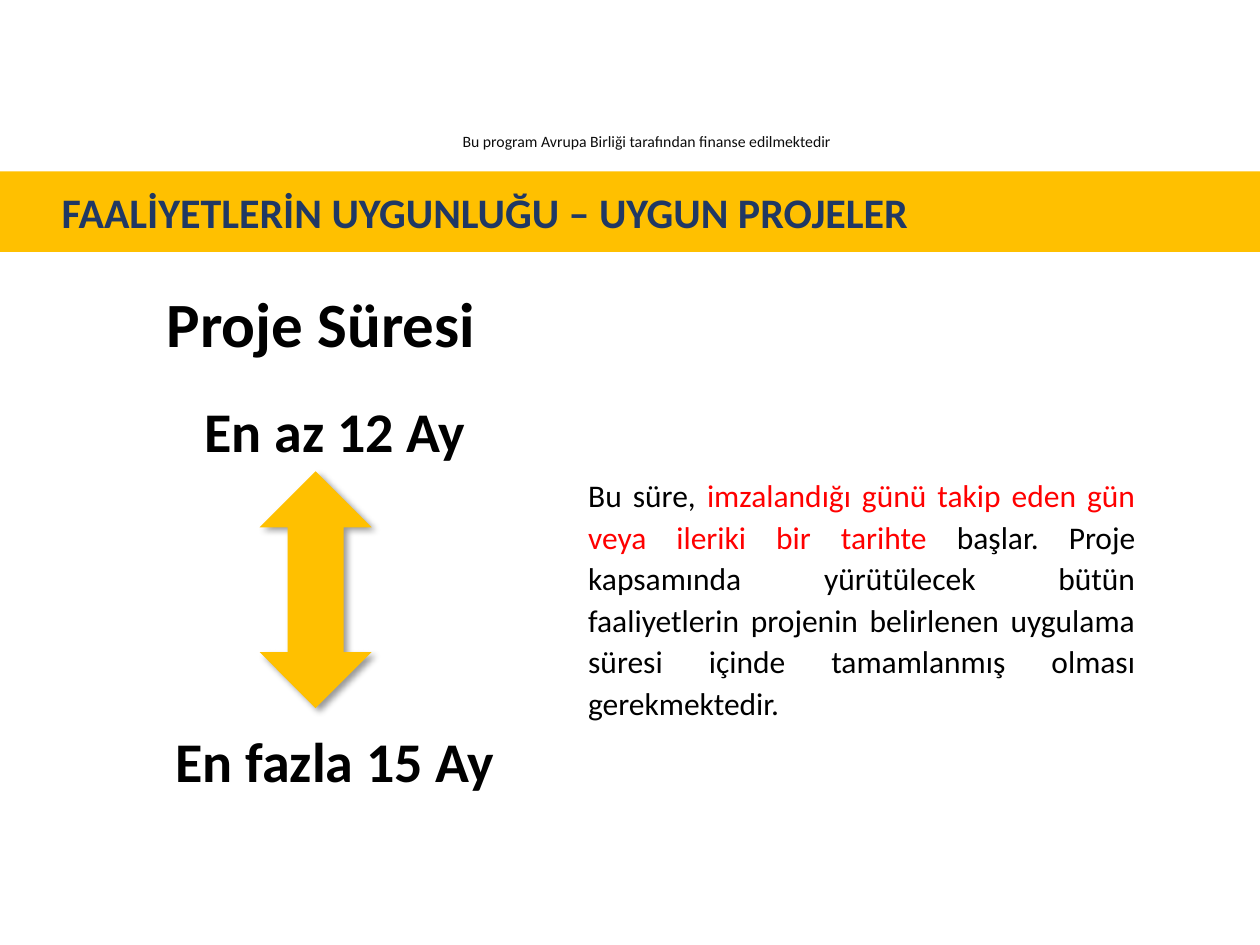
from lxml.etree import SubElement
from pptx import Presentation
from pptx.dml.color import RGBColor
from pptx.enum.shapes import MSO_SHAPE
from pptx.enum.text import MSO_ANCHOR, PP_ALIGN
from pptx.oxml.ns import qn
from pptx.util import Inches, Pt

GOLD, NAVY, BLACK, RED = "FFC000", "203864", "000000", "FF0000"
CENTER, LEFT, JUSTIFY = PP_ALIGN.CENTER, PP_ALIGN.LEFT, PP_ALIGN.JUSTIFY

BAND = (0, 1.36, 10, 0.64)
ARROW = (2.06, 3.74, 0.89, 1.88)
BAND_TITLE = [("FAALİYETLERİN UYGUNLUĞU – UYGUN PROJELER", NAVY)]

TEXTS = [
    ((2.79, 1, 4.68, 0.25),
     [("Bu program Avrupa Birliği tarafından finanse edilmektedir", "0D0D0D")],
     {"size": Pt(9)}, {"alignment": CENTER}),
    ((0, 2.15, 5.1, 0.69), [("Proje Süresi", BLACK)],
     {"size": Pt(36), "bold": True}, {"alignment": CENTER, "line_spacing": 1.1}),
    ((0, 3.1, 5.32, 0.64), [("En az 12 Ay", BLACK)],
     {"size": Pt(32), "bold": True}, {"alignment": CENTER}),
    ((0, 5.72, 5.32, 0.64), [("En fazla 15 Ay", BLACK)],
     {"size": Pt(32), "bold": True}, {"alignment": CENTER}),
    ((4.57, 3.7, 4.54, 2.1),
     [("Bu süre, ", BLACK),
      ("imzalandığı günü takip eden gün veya ileriki bir tarihte ", RED),
      ("başlar. Proje kapsamında yürütülecek bütün faaliyetlerin projenin "
       "belirlenen uygulama süresi içinde tamamlanmış olması gerekmektedir.", BLACK)],
     {"size": Pt(18)}, {"alignment": JUSTIFY, "line_spacing": 1.1}),
]


def rgb(color):
    return RGBColor.from_string(color)


def apply(target, values):
    for name, value in values.items():
        setattr(target, name, value)


def write(frame, runs, font, layout):
    frame.word_wrap = True
    paragraph = frame.paragraphs[0]
    apply(paragraph, layout)
    for words, color in runs:
        run = paragraph.add_run()
        run.text = words
        apply(run.font, {"name": "Calibri", **font})
        run.font.color.rgb = rgb(color)


def add_gold_shape(slide, preset, box):
    shape = slide.shapes.add_shape(preset, *map(Inches, box))
    shape.shadow.inherit = False
    shape.fill.solid()
    shape.fill.fore_color.rgb = rgb(GOLD)
    shape.line.fill.background()
    return shape


def add_shadow(shape, color, opacity, blur, distance, angle):
    effects = shape._element.spPr.find(qn("a:effectLst"))
    shadow = SubElement(effects, qn("a:outerShdw"), blurRad=str(Pt(blur)),
                        dist=str(Pt(distance)), dir=str(angle * 60000),
                        algn="tl", rotWithShape="0")
    tint = SubElement(shadow, qn("a:srgbClr"), val=color)
    SubElement(tint, qn("a:alpha"), val=str(opacity * 1000))


def main():
    deck = Presentation()
    apply(deck, {"slide_width": Inches(10), "slide_height": Inches(7.5)})
    slide = deck.slides.add_slide(deck.slide_layouts[6])

    band = add_gold_shape(slide, MSO_SHAPE.RECTANGLE, BAND)
    apply(band.text_frame, {"margin_left": Inches(0.49), "margin_top": Inches(0.12),
                            "margin_bottom": Inches(0.12),
                            "vertical_anchor": MSO_ANCHOR.TOP})
    write(band.text_frame, BAND_TITLE, {"size": Pt(24), "bold": True},
          {"alignment": LEFT})

    for box, runs, font, layout in TEXTS:
        text_box = slide.shapes.add_textbox(*map(Inches, box))
        write(text_box.text_frame, runs, font, layout)

    arrow = add_gold_shape(slide, MSO_SHAPE.UP_DOWN_ARROW, ARROW)
    add_shadow(arrow, BLACK, opacity=40, blur=4, distance=3, angle=45)

    deck.save("out.pptx")


if __name__ == "__main__":
    main()
